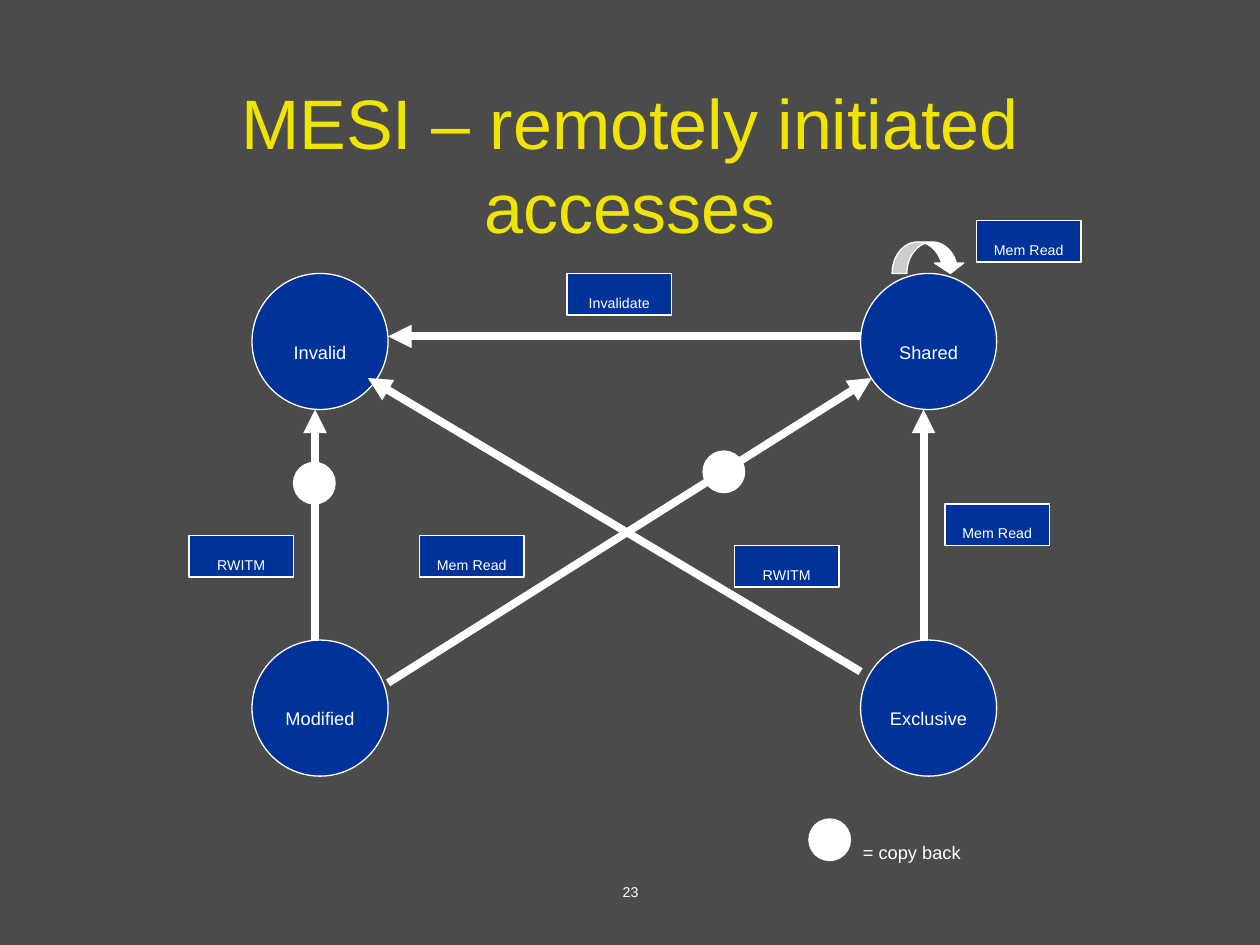
from lxml import etree
from pptx import Presentation
from pptx.dml.color import RGBColor
from pptx.enum.shapes import MSO_CONNECTOR, MSO_SHAPE
from pptx.enum.text import MSO_ANCHOR, PP_ALIGN
from pptx.oxml.ns import qn
from pptx.util import Inches, Pt

GRAY = RGBColor(0x4B, 0x4B, 0x4B)
BLUE = RGBColor(0x00, 0x33, 0x99)
WHITE = RGBColor(0xFF, 0xFF, 0xFF)
YELLOW = RGBColor(0xF0, 0xE5, 0x00)
FONT = "Arial"

OVAL, RECT = MSO_SHAPE.OVAL, MSO_SHAPE.RECTANGLE
CURVED_ARROW = MSO_SHAPE.CURVED_DOWN_ARROW
STRAIGHT = MSO_CONNECTOR.STRAIGHT
LEFT, CENTER = PP_ALIGN.LEFT, PP_ALIGN.CENTER
TOP, MIDDLE = MSO_ANCHOR.TOP, MSO_ANCHOR.MIDDLE

STATE_SIZE = 1.08
LABEL_W, LABEL_H = 0.83, 0.33
DOT_SIZE = 0.33

STATES = [
    ("Invalid", 2, 2.17),
    ("Modified", 2, 5.08),
    ("Exclusive", 6.83, 5.08),
    ("Shared", 6.83, 2.17),
]
TRANSITIONS = [  # start x, y, end x, y
    (2.5, 5.08, 2.5, 3.25),
    (6.83, 2.67, 3.08, 2.67),
    (7.33, 5.08, 7.33, 3.25),
    (3.08, 5.42, 6.92, 3),
    (6.83, 5.33, 2.92, 3),
]
LABELS = [
    ("Mem Read", 7.75, 1.75),
    ("Mem Read", 7.5, 4),
    ("Mem Read", 3.33, 4.25),
    ("Invalidate", 4.5, 2.17),
    ("RWITM", 5.83, 4.33),
    ("RWITM", 1.5, 4.25),
]
COPY_BACKS = [(2.33, 3.67), (5.58, 3.58), (6.42, 6.5)]


def write_text(sp, text, size, color=WHITE, align=CENTER, anchor=MIDDLE,
               wrap=False, lowered=True):
    tf = sp.text_frame
    tf.word_wrap = wrap
    tf.vertical_anchor = anchor
    p = tf.paragraphs[0]
    p.alignment = align
    p.font.name = FONT
    p.font.size = Pt(size)
    p.font.color.rgb = color
    r = p.add_run()
    r.text = text
    if lowered:
        r._r.get_or_add_rPr().set("baseline", "-25000")


def add_text(s, text, x, y, w, h, size, **options):
    sp = s.shapes.add_textbox(Inches(x), Inches(y), Inches(w), Inches(h))
    write_text(sp, text, size, **options)


def add_figure(s, kind, x, y, w, h, fill):
    sp = s.shapes.add_shape(kind, Inches(x), Inches(y), Inches(w), Inches(h))
    sp.shadow.inherit = False
    sp.fill.solid()
    sp.fill.fore_color.rgb = fill
    sp.line.color.rgb = WHITE
    sp.line.width = Pt(0.75)
    return sp


def add_arrow(s, x1, y1, x2, y2):
    line = s.shapes.add_connector(
        STRAIGHT, Inches(x1), Inches(y1), Inches(x2), Inches(y2))
    line.line.color.rgb = WHITE
    line.line.width = Pt(4.5)
    sp_pr = line._element.spPr
    etree.SubElement(sp_pr.find(qn("a:ln")), qn("a:tailEnd"), type="triangle")
    etree.SubElement(sp_pr, qn("a:effectLst"))


def main():
    prs = Presentation()
    prs.slide_width, prs.slide_height = Inches(10), Inches(7.5)
    s = prs.slides.add_slide(prs.slide_layouts[6])
    s.background.fill.solid()
    s.background.fill.fore_color.rgb = GRAY

    # Page number and title
    add_text(s, "23", 3.42, 6.83, 3.17, 0.5, 14, anchor=TOP, wrap=True)
    add_text(s, "MESI – remotely initiated accesses", 0.75, 0.67, 8.5, 1.25,
             40, color=YELLOW, wrap=True, lowered=False)

    # Cache line states
    for name, x, y in STATES:
        sp = add_figure(s, OVAL, x, y, STATE_SIZE, STATE_SIZE, BLUE)
        write_text(sp, name, 18)

    # Transitions, with the loop on Shared
    for ends in TRANSITIONS:
        add_arrow(s, *ends)
    loop = add_figure(s, CURVED_ARROW, 7.08, 1.92, 0.58, 0.25, WHITE)
    for i, value in enumerate((0.47, 0.93, 0.33)):
        loop.adjustments[i] = value

    # Transition labels
    for text, x, y in LABELS:
        sp = add_figure(s, RECT, x, y, LABEL_W, LABEL_H, BLUE)
        write_text(sp, text, 14)

    # Copy-back markers and their legend
    for x, y in COPY_BACKS:
        add_figure(s, OVAL, x, y, DOT_SIZE, DOT_SIZE, WHITE)
    add_text(s, "= copy back", 6.75, 6.46, 1.43, 0.4, 18, align=LEFT,
             anchor=TOP)

    prs.save("out.pptx")


if __name__ == "__main__":
    main()
